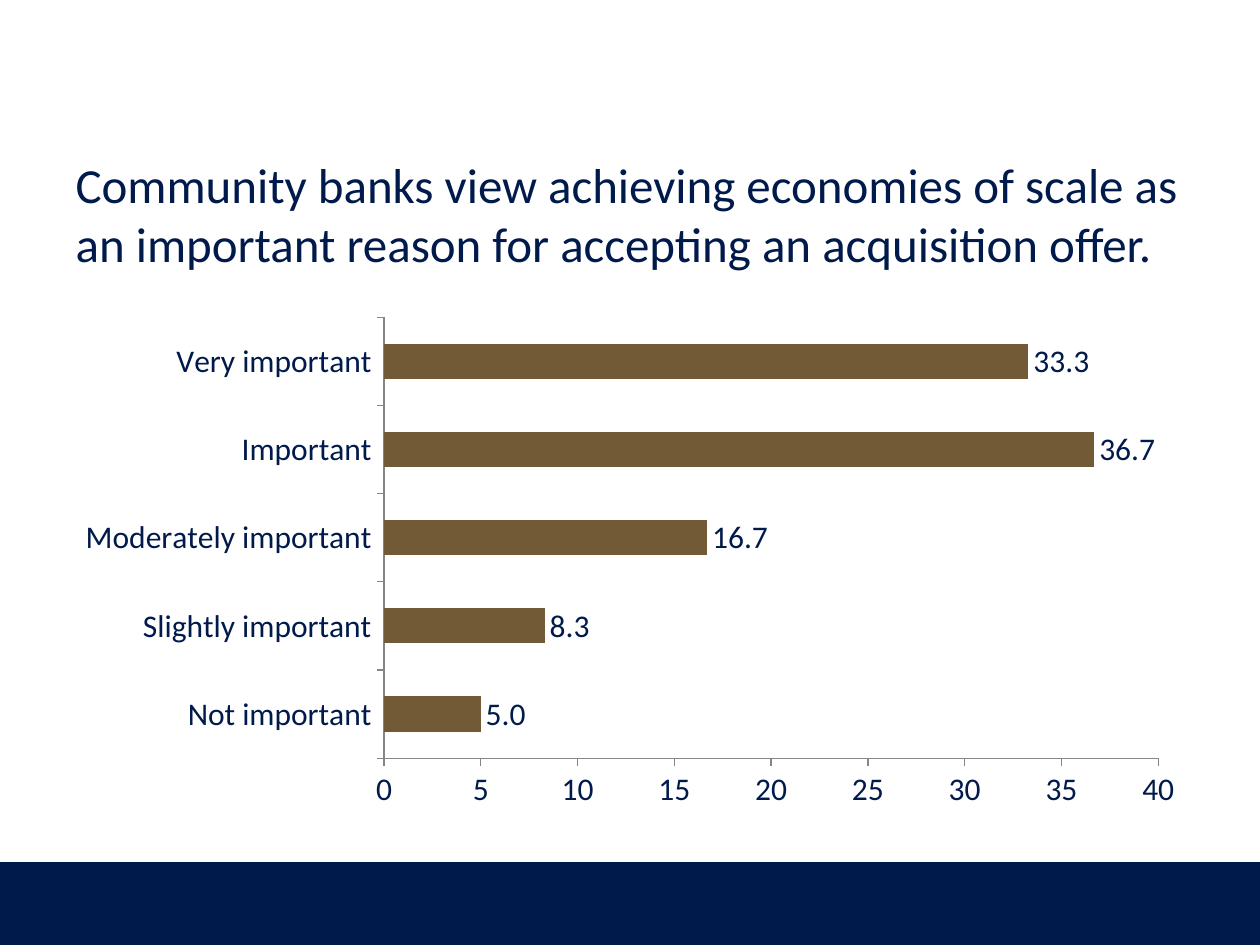
from pptx import Presentation
from pptx.chart.data import CategoryChartData
from pptx.dml.color import RGBColor
from pptx.enum.chart import XL_CHART_TYPE, XL_LABEL_POSITION, XL_TICK_MARK
from pptx.enum.shapes import MSO_SHAPE
from pptx.enum.text import MSO_ANCHOR, MSO_AUTO_SIZE, PP_ALIGN
from pptx.util import Emu, Pt

BAR_CLUSTERED = XL_CHART_TYPE.BAR_CLUSTERED
OUTSIDE_END = XL_LABEL_POSITION.OUTSIDE_END
TICK_OUT = XL_TICK_MARK.OUTSIDE
RECTANGLE = MSO_SHAPE.RECTANGLE
MIDDLE = MSO_ANCHOR.MIDDLE
NO_AUTOFIT = MSO_AUTO_SIZE.NONE
LEFT = PP_ALIGN.LEFT

EMU_PER_PX = 914400 / 126
SLIDE_W, SLIDE_H = 1260, 945
TITLE_ONLY = 5
FONT = "Calibri"
NAVY, BROWN, GRAY = "001A4B", "715A35", "868686"

HEADLINE = (
    "Community banks view achieving economies of scale as "
    "an important reason for accepting an acquisition offer."
)
RATINGS = {
    "Not important": 5,
    "Slightly important": 8.3,
    "Moderately important": 16.7,
    "Important": 36.7,
    "Very important": 33.3,
}


def px(length):
    return Emu(round(length * EMU_PER_PX))


def color(hex_code):
    return RGBColor.from_string(hex_code)


def format_font(font, size, hex_code=NAVY):
    font.name = FONT
    font.size = Pt(size)
    font.bold = False
    font.color.rgb = color(hex_code)


def write_text(frame, text, size=18, hex_code=NAVY, align=LEFT, anchor=MIDDLE):
    frame.word_wrap = True
    frame.auto_size = NO_AUTOFIT
    frame.vertical_anchor = anchor
    paragraph = frame.paragraphs[0]
    paragraph.alignment = align
    run = paragraph.add_run()
    run.text = text
    format_font(run.font, size, hex_code)


def add_footer_band(slide, left, top, width, height):
    band = slide.shapes.add_shape(
        RECTANGLE, px(left), px(top), px(width), px(height)
    )
    band.shadow.inherit = False
    band.fill.solid()
    band.fill.fore_color.rgb = color(NAVY)
    band.line.fill.background()


def place_headline(slide, left, top, width, height):
    headline = slide.shapes.title
    headline.left, headline.top = px(left), px(top)
    headline.width, headline.height = px(width), px(height)
    write_text(headline.text_frame, HEADLINE, size=28)


def add_ratings_chart(slide, left, top, width, height):
    ratings = CategoryChartData(number_format="General")
    ratings.categories = list(RATINGS)
    ratings.add_series("Series 1", list(RATINGS.values()))
    chart = slide.shapes.add_chart(
        BAR_CLUSTERED, px(left), px(top), px(width), px(height), ratings
    ).chart
    chart.has_legend = False
    chart.has_title = False
    format_font(chart.font, 18)

    for axis in (chart.category_axis, chart.value_axis):
        axis.has_major_gridlines = False
        axis.major_tick_mark = TICK_OUT
        axis.format.line.color.rgb = color(GRAY)
        axis.format.line.width = Pt(0.75)
    chart.value_axis.minimum_scale = 0
    chart.value_axis.maximum_scale = 40
    chart.value_axis.major_unit = 5

    plot = chart.plots[0]
    plot.gap_width = 150
    plot.vary_by_categories = False
    bars = plot.series[0]
    bars.format.fill.solid()
    bars.format.fill.fore_color.rgb = color(BROWN)
    labels = bars.data_labels
    labels.show_value = True
    labels.number_format = "#,##0.0"
    labels.number_format_is_linked = False
    labels.position = OUTSIDE_END
    format_font(labels.font, 18)


def main():
    deck = Presentation()
    deck.slide_width, deck.slide_height = px(SLIDE_W), px(SLIDE_H)
    slide = deck.slides.add_slide(deck.slide_layouts[TITLE_ONLY])
    margin = 63
    content_w = SLIDE_W - 2 * margin
    band_h = 83
    add_footer_band(slide, 0, SLIDE_H - band_h, SLIDE_W, band_h)
    place_headline(slide, margin, 135, content_w, 157)
    add_ratings_chart(slide, margin, 307, content_w, 512)
    deck.save("out.pptx")


if __name__ == "__main__":
    main()
